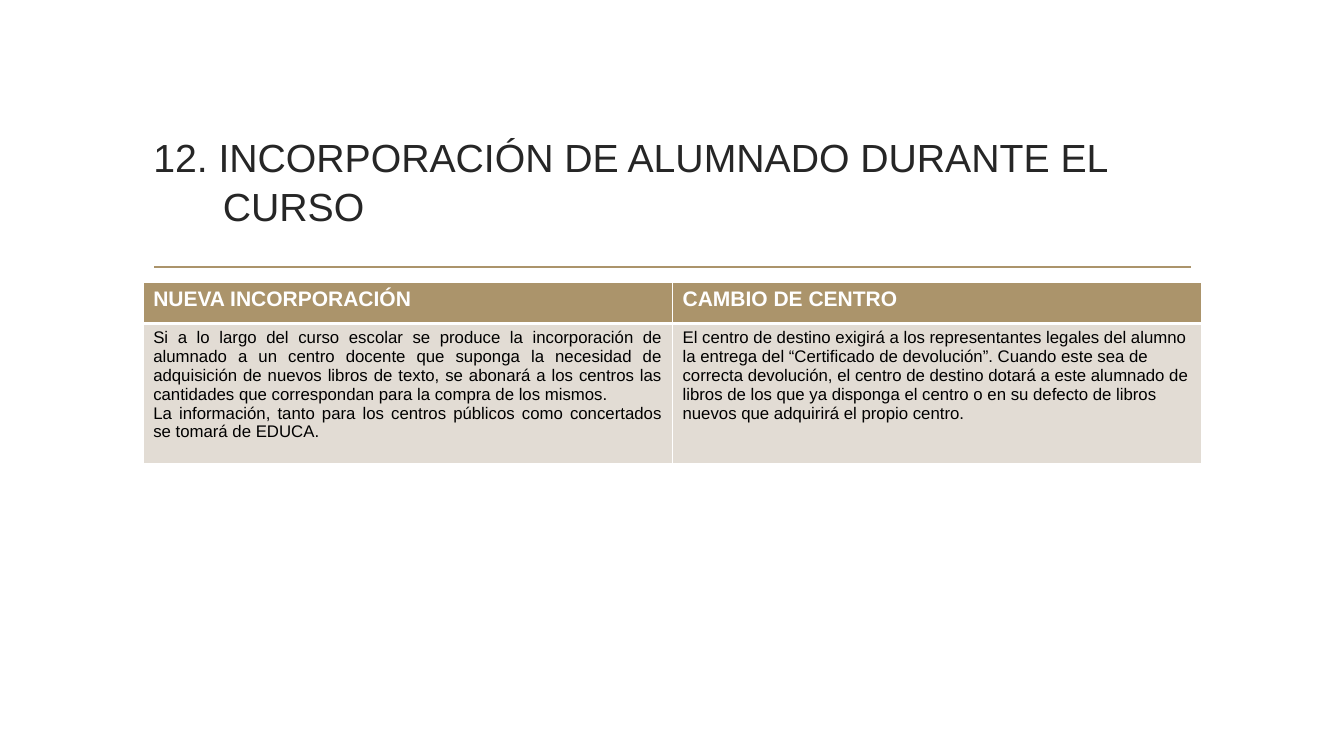
from dataclasses import dataclass

import lxml.etree
import pptx
import pptx.dml.color
import pptx.enum.shapes
import pptx.enum.text
import pptx.oxml.ns
import pptx.slide
import pptx.table
import pptx.text.text
import pptx.util

Inches = pptx.util.Inches
Pt = pptx.util.Pt
RGBColor = pptx.dml.color.RGBColor
Align = pptx.enum.text.PP_ALIGN
qn = pptx.oxml.ns.qn

WHITE = RGBColor(0xFF, 0xFF, 0xFF)
BLACK = RGBColor(0x00, 0x00, 0x00)
CHARCOAL = RGBColor(0x26, 0x26, 0x26)
GOLD = RGBColor(0xAB, 0x94, 0x6B)
SAND = RGBColor(0xE2, 0xDC, 0xD4)

FONT = "Arial"
LEFT = Inches(1.42)
WIDTH = Inches(10.5)
TITLE = "12. INCORPORACIÓN DE ALUMNADO DURANTE EL CURSO"


@dataclass(frozen=True)
class RowStyle:
    height: float
    size: float
    bold: bool
    color: RGBColor
    fill: RGBColor
    bottom_border: float


@dataclass(frozen=True)
class Case:
    heading: str
    paragraphs: tuple[str, ...]
    alignment: Align


HEADER = RowStyle(0.41, 15, True, WHITE, GOLD, 3)
BODY = RowStyle(1.39, 12, False, BLACK, SAND, 1)

CASES = (
    Case(
        "NUEVA INCORPORACIÓN",
        (
            "Si a lo largo del curso escolar se produce la incorporación de alumnado "
            "a un centro docente que suponga la necesidad de adquisición de nuevos "
            "libros de texto, se abonará a los centros las cantidades que "
            "correspondan para la compra de los mismos.",
            "La información, tanto para los centros públicos como concertados "
            "se tomará de EDUCA.",
        ),
        Align.JUSTIFY,
    ),
    Case(
        "CAMBIO DE CENTRO",
        (
            "El centro de destino exigirá a los representantes legales del alumno "
            "la entrega del “Certificado de devolución”. Cuando este sea de correcta "
            "devolución, el centro de destino dotará a este alumnado de libros de "
            "los que ya disponga el centro o en su defecto de libros nuevos que "
            "adquirirá el propio centro.",
        ),
        Align.LEFT,
    ),
)


def add_run(
    paragraph: pptx.text.text._Paragraph,
    text: str,
    size: float,
    color: RGBColor,
    bold: bool = False,
) -> None:
    run = paragraph.add_run()
    run.text = text
    run.font.name = FONT
    run.font.size = Pt(size)
    run.font.bold = bold
    run.font.color.rgb = color


def set_borders(cell: pptx.table._Cell, bottom: float) -> None:
    properties = cell._tc.get_or_add_tcPr()
    for tag, width in (("a:lnL", 1), ("a:lnR", 1), ("a:lnT", 1), ("a:lnB", bottom)):
        border = lxml.etree.SubElement(properties, qn(tag), w=str(Pt(width)))
        fill = lxml.etree.SubElement(border, qn("a:solidFill"))
        lxml.etree.SubElement(fill, qn("a:srgbClr"), val=str(WHITE))


def fill_cell(
    cell: pptx.table._Cell,
    texts: tuple[str, ...],
    style: RowStyle,
    alignment: Align,
) -> None:
    set_borders(cell, style.bottom_border)
    cell.fill.solid()
    cell.fill.fore_color.rgb = style.fill
    for index, text in enumerate(texts):
        frame = cell.text_frame
        paragraph = frame.add_paragraph() if index else frame.paragraphs[0]
        paragraph.alignment = alignment
        add_run(paragraph, text, style.size, style.color, style.bold)


def add_title(slide: pptx.slide.Slide) -> None:
    title = slide.shapes.title
    title.left, title.top = LEFT, Inches(1.07)
    title.width, title.height = WIDTH, Inches(1.43)
    frame = title.text_frame
    frame.word_wrap = True
    frame.auto_size = pptx.enum.text.MSO_AUTO_SIZE.NONE
    frame.vertical_anchor = pptx.enum.text.MSO_ANCHOR.MIDDLE
    paragraph = frame.paragraphs[0]
    paragraph.alignment = Align.LEFT
    paragraph.line_spacing = 1.05
    properties = paragraph._p.get_or_add_pPr()
    properties.set("marL", str(Inches(0.69)))
    properties.set("indent", str(-Inches(0.69)))
    add_run(paragraph, TITLE, 28, CHARCOAL)


def add_rule(slide: pptx.slide.Slide) -> None:
    rule = slide.shapes.add_connector(
        pptx.enum.shapes.MSO_CONNECTOR.STRAIGHT,
        Inches(1.53), Inches(2.65), Inches(11.81), Inches(2.65),
    )
    rule.line.color.rgb = GOLD
    rule.line.width = Pt(1.25)
    lxml.etree.SubElement(rule._element.spPr, qn("a:effectLst"))


def add_cases(slide: pptx.slide.Slide) -> None:
    height = Inches(HEADER.height + BODY.height)
    table = slide.shapes.add_table(
        2, len(CASES), LEFT, Inches(2.8), WIDTH, height
    ).table
    for row, style in zip(table.rows, (HEADER, BODY)):
        row.height = Inches(style.height)
    for column, case in enumerate(CASES):
        fill_cell(table.cell(0, column), (case.heading,), HEADER, Align.LEFT)
        fill_cell(table.cell(1, column), case.paragraphs, BODY, case.alignment)


def main() -> None:
    presentation = pptx.Presentation()
    presentation.slide_width = Inches(13.33)
    presentation.slide_height = Inches(7.5)
    slide = presentation.slides.add_slide(presentation.slide_layouts[5])
    add_rule(slide)
    add_title(slide)
    add_cases(slide)
    presentation.save("out.pptx")


if __name__ == "__main__":
    main()
